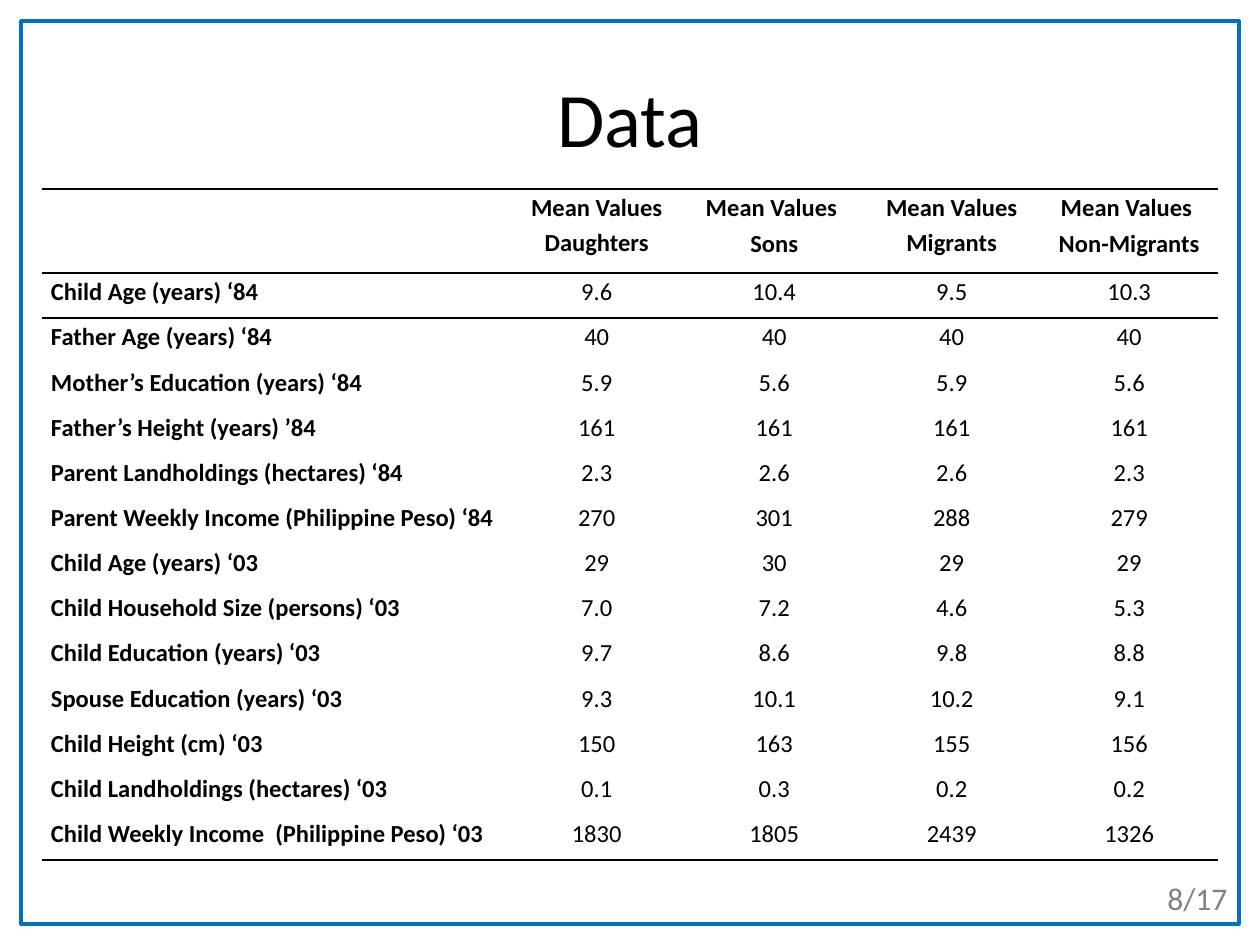
import pptx
import pptx.dml.color
import pptx.enum.shapes
import pptx.enum.text
import pptx.oxml
import pptx.oxml.ns
import pptx.util

EMU_PER_PX = 914400 / 126
BLACK = pptx.dml.color.RGBColor(0x00, 0x00, 0x00)
GRAY = pptx.dml.color.RGBColor(0x80, 0x80, 0x80)
BLUE = pptx.dml.color.RGBColor(0x00, 0x70, 0xC0)
NO_STYLE = "{2D5ABB26-0587-4C30-8999-92F81FD0307C}"
LEFT = pptx.enum.text.PP_ALIGN.LEFT
CENTER = pptx.enum.text.PP_ALIGN.CENTER
TOP = pptx.enum.text.MSO_ANCHOR.TOP
MIDDLE = pptx.enum.text.MSO_ANCHOR.MIDDLE

HEADERS = ["", "Mean Values Daughters", "Mean Values \nSons",
           "Mean Values Migrants", "Mean Values \nNon-Migrants"]
ROWS = [
    ["Child Age (years) ‘84", "9.6", "10.4", "9.5", "10.3"],
    ["Father Age (years) ‘84", "40", "40", "40", "40"],
    ["Mother’s Education (years) ‘84", "5.9", "5.6", "5.9", "5.6"],
    ["Father’s Height (years) ’84", "161", "161", "161", "161"],
    ["Parent Landholdings (hectares) ‘84", "2.3", "2.6", "2.6", "2.3"],
    ["Parent Weekly Income (Philippine Peso) ‘84", "270", "301", "288", "279"],
    ["Child Age (years) ‘03", "29", "30", "29", "29"],
    ["Child Household Size (persons) ‘03", "7.0", "7.2", "4.6", "5.3"],
    ["Child Education (years) ‘03", "9.7", "8.6", "9.8", "8.8"],
    ["Spouse Education (years) ‘03", "9.3", "10.1", "10.2", "9.1"],
    ["Child Height (cm) ‘03", "150", "163", "155", "156"],
    ["Child Landholdings (hectares) ‘03", "0.1", "0.3", "0.2", "0.2"],
    ["Child Weekly Income  (Philippine Peso) ‘03", "1830", "1805", "2439", "1326"],
]


def px(length):
    return pptx.util.Emu(round(length * EMU_PER_PX))


def write_text(frame, text, size, color=BLACK, bold=False, align=LEFT,
               line_spacing=None, space_after=None, font="Calibri"):
    """Fill a text frame, one paragraph per line of text."""
    for index, line in enumerate(text.split("\n")):
        paragraph = frame.add_paragraph() if index else frame.paragraphs[0]
        paragraph.alignment = align
        if line_spacing is not None:
            paragraph.line_spacing = line_spacing
        if space_after is not None:
            paragraph.space_after = pptx.util.Pt(space_after)
        run = paragraph.add_run()
        run.text = line
        run.font.name = font
        run.font.size = pptx.util.Pt(size)
        run.font.bold = bold
        run.font.color.rgb = color


def add_border(cell, side, color=BLACK, width=1):
    cell._tc.get_or_add_tcPr().append(pptx.oxml.parse_xml(
        f'<a:{side} {pptx.oxml.ns.nsdecls("a")} w="{pptx.util.Pt(width)}">'
        f'<a:solidFill><a:srgbClr val="{color}"/></a:solidFill></a:{side}>'))


class SlideBuilder:
    def __init__(self, presentation):
        self.slide = presentation.slides.add_slide(presentation.slide_layouts[6])

    def frame(self, left, top, width, height, color, line_width):
        shape = self.slide.shapes.add_shape(
            pptx.enum.shapes.MSO_SHAPE.RECTANGLE,
            px(left), px(top), px(width), px(height))
        shape.shadow.inherit = False
        shape.fill.background()
        shape.line.color.rgb = color
        shape.line.width = pptx.util.Pt(line_width)

    def text(self, left, top, width, height, text, anchor=TOP, **style):
        box = self.slide.shapes.add_textbox(px(left), px(top), px(width), px(height))
        box.text_frame.word_wrap = True
        box.text_frame.vertical_anchor = anchor
        write_text(box.text_frame, text, **style)

    def table(self, left, top, width, height, label_width, header_height, rows):
        row_count, column_count = len(rows), len(rows[0])
        table = self.slide.shapes.add_table(
            row_count, column_count, px(left), px(top), px(width), px(height)).table
        table.first_row = table.horz_banding = False
        table._tbl.tblPr.find(pptx.oxml.ns.qn("a:tableStyleId")).text = NO_STYLE

        # The label column and header row are fixed; the others share the rest
        value_width = (width - label_width) / (column_count - 1)
        for index, column in enumerate(table.columns):
            column.width = px(value_width if index else label_width)
        body_height = (height - header_height) / (row_count - 1)
        for index, row in enumerate(table.rows):
            row.height = px(body_height if index else header_height)

        for row_index, values in enumerate(rows):
            for column_index, value in enumerate(values):
                cell = table.cell(row_index, column_index)
                cell.margin_left = cell.margin_right = px(9)
                cell.margin_top = cell.margin_bottom = 0
                if row_index in (0, 1):
                    add_border(cell, "lnT")
                if row_index in (0, row_count - 1):
                    add_border(cell, "lnB")
                cell.fill.background()
                if value:
                    write_text(cell.text_frame, value, size=14,
                               bold=row_index == 0 or column_index == 0,
                               align=CENTER if column_index else LEFT,
                               line_spacing=1.15, space_after=0.6)


def main():
    presentation = pptx.Presentation()
    presentation.slide_width = px(1260)
    presentation.slide_height = px(945)
    builder = SlideBuilder(presentation)

    # Border and title
    builder.frame(21, 21, 1218, 903, color=BLUE, line_width=2)
    builder.text(63, 38, 1134, 157, "Data", anchor=MIDDLE, size=44, align=CENTER)

    # Mean values by group
    builder.table(42, 189, 1176, 671, label_width=466, header_height=84,
                  rows=[HEADERS] + ROWS)

    # Page number
    builder.text(1155, 873, 105, 50, "8/17", size=18, color=GRAY)

    presentation.save("out.pptx")


if __name__ == "__main__":
    main()
